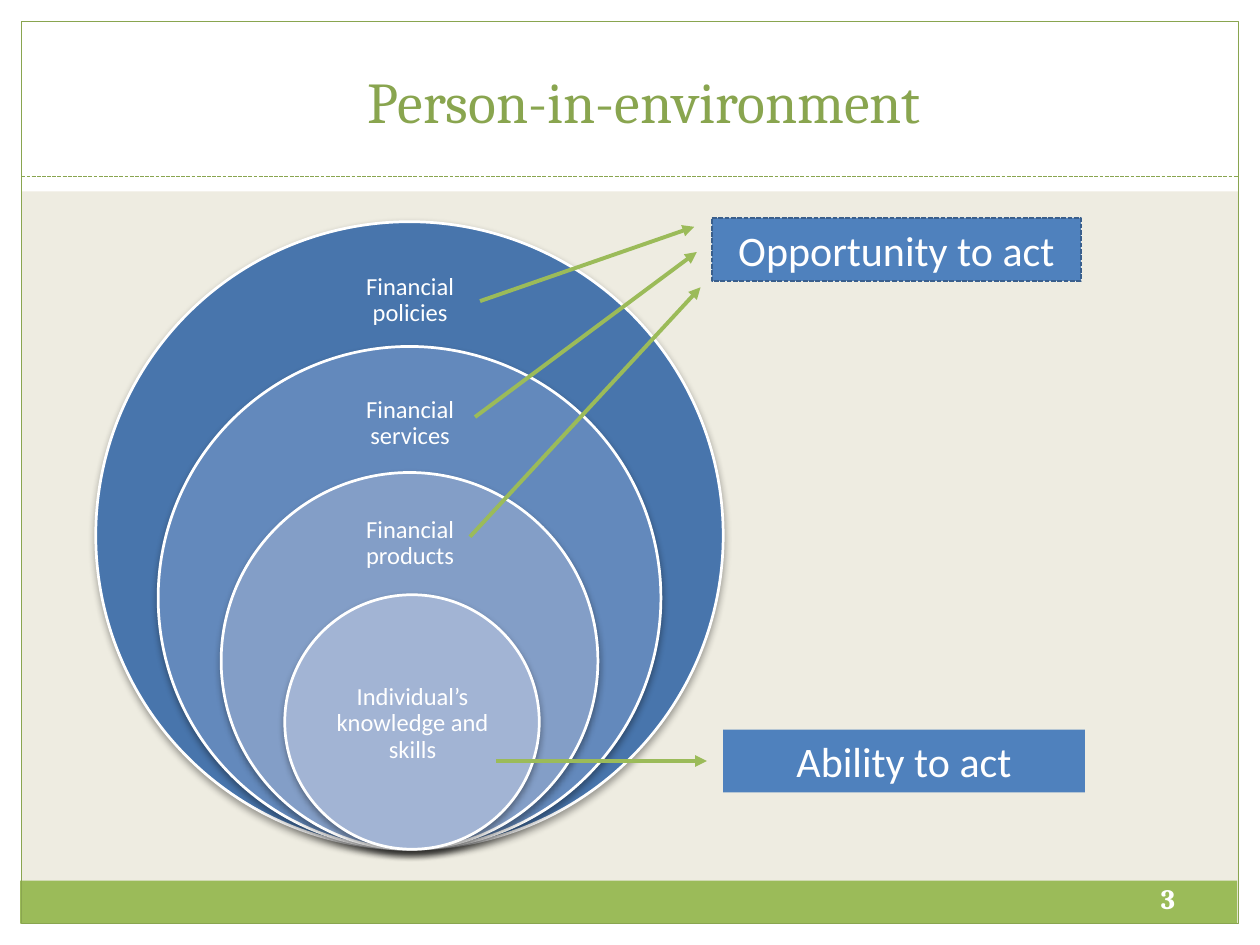
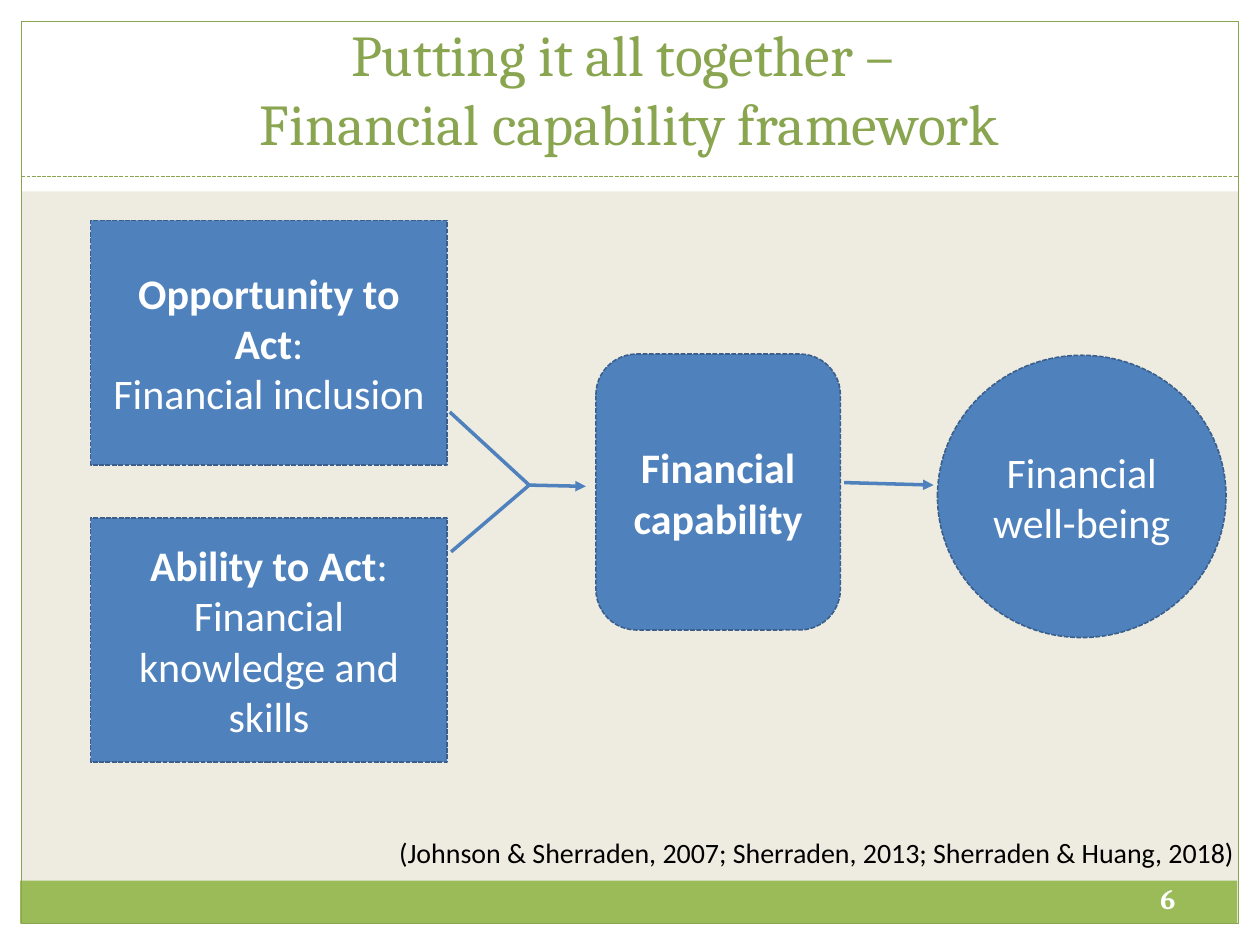
from dataclasses import dataclass

import lxml.etree
import pptx
import pptx.dml.color
import pptx.enum.dml
import pptx.enum.shapes
import pptx.enum.text
import pptx.oxml
import pptx.oxml.ns
import pptx.shapes.autoshape
import pptx.shapes.connector
import pptx.slide
import pptx.text.text
import pptx.util

Inches = pptx.util.Inches
Pt = pptx.util.Pt
SHAPE = pptx.enum.shapes.MSO_SHAPE
ANCHOR = pptx.enum.text.MSO_ANCHOR
ALIGN = pptx.enum.text.PP_ALIGN
DASH = pptx.enum.dml.MSO_LINE.SQUARE_DOT

WHITE = "FFFFFF"
BLACK = "000000"
CREAM = "EEECE1"
GREEN = "9BBB59"
DARK_GREEN = "89A54F"
BLUE = "4F81BD"
DARK_BLUE = "3A5F8C"
BODY_FONT = "Calibri"
TITLE_FONT = "Cambria"

Frame = tuple[float, float, float, float]  # left, top, width, height
Point = tuple[float, float]


@dataclass
class Span:
    text: str
    bold: bool = False


@dataclass
class TextStyle:
    size: float
    color: str = WHITE
    font: str = BODY_FONT
    align: ALIGN = ALIGN.CENTER
    anchor: ANCHOR = ANCHOR.MIDDLE
    inset: float | None = None
    spacing: float | None = None
    wrap: bool = True


@dataclass
class Box:
    frame: Frame
    paragraphs: list[list[Span]]
    kind: SHAPE = SHAPE.RECTANGLE
    anchor: ANCHOR = ANCHOR.MIDDLE
    outlined: bool = True


@dataclass
class Ring:
    center: float
    diameter: float
    color: str
    label: str
    label_frame: Frame


@dataclass
class Line:
    start: Point
    end: Point
    arrow: bool = True


TITLE_STYLE = TextStyle(33, DARK_GREEN, TITLE_FONT, anchor=ANCHOR.BOTTOM)
NUMBER_STYLE = TextStyle(16, font=TITLE_FONT, inset=0.05)
RING_STYLE = TextStyle(14, inset=0.11, spacing=0.9)
SOURCE_STYLE = TextStyle(16, BLACK, align=ALIGN.LEFT, anchor=ANCHOR.TOP, wrap=False)

EDGES: list[Frame] = [
    (0, 7.33, 10, 0.17),
    (0, 0, 10, 1.52),
    (0, 0, 0.17, 7.5),
    (9.83, 0, 0.17, 7.5),
]

RING_BOTTOM = 6.74
RINGS = [
    Ring(3.25, 4.98, "4875AC", "Financial policies", (2.56, 2.01, 1.39, 0.75)),
    Ring(3.25, 3.99, "6389BC", "Financial services", (2.56, 3, 1.39, 0.72)),
    Ring(3.25, 2.99, "839EC7", "Financial products", (2.56, 3.98, 1.39, 0.67)),
    Ring(3.27, 2.02, "A2B4D4", "Individual’s knowledge and skills", (2.56, 5.24, 1.43, 1.01)),
]
OUTCOMES = [
    Box((5.65, 1.73, 2.93, 0.5), [[Span("Opportunity to act")]], anchor=ANCHOR.TOP),
    Box((5.74, 5.79, 2.87, 0.5), [[Span("Ability to act")]], anchor=ANCHOR.TOP, outlined=False),
]
RING_ARROWS = [
    Line((3.81, 2.39), (5.51, 1.8)),
    Line((3.77, 3.31), (5.53, 2)),
    Line((3.73, 4.26), (5.56, 2.28)),
    Line((3.94, 6.04), (5.61, 6.04)),
]

JUNCTION = (4.2, 3.85)
FRAMEWORK_LINES = [
    Line((3.57, 3.27), JUNCTION, arrow=False),
    Line((3.58, 4.38), JUNCTION, arrow=False),
    Line(JUNCTION, (4.65, 3.86)),
    Line((6.7, 3.83), (7.41, 3.85)),
]
FRAMEWORK_BOXES = [
    Box((0.72, 4.11, 2.83, 1.94),
        [[Span("Ability to Act", True), Span(":")],
         [Span("Financial knowledge and skills")]]),
    Box((0.72, 1.75, 2.83, 1.94),
        [[Span("Opportunity to Act", True), Span(":")],
         [Span("Financial inclusion")]]),
    Box((4.73, 2.81, 1.94, 2.19), [[Span("Financial capability", True)]],
        SHAPE.ROUNDED_RECTANGLE),
    Box((7.44, 2.82, 2.29, 2.24), [[Span("Financial well-being")]], SHAPE.OVAL),
]


def rgb(color: str) -> pptx.dml.color.RGBColor:
    return pptx.dml.color.RGBColor.from_string(color)


def lengths(values: tuple[float, ...]) -> list[int]:
    return [Inches(value) for value in values]


def write(tf: pptx.text.text.TextFrame, paragraphs: list[list[Span]], style: TextStyle) -> None:
    tf.word_wrap = style.wrap
    tf.vertical_anchor = style.anchor
    if style.inset is not None:
        tf.margin_left = tf.margin_right = Inches(style.inset)
        tf.margin_top = tf.margin_bottom = Inches(style.inset)
    for i, spans in enumerate(paragraphs):
        p = tf.add_paragraph() if i else tf.paragraphs[0]
        p.text = spans[0].text
        for span in spans[1:]:
            p.add_run().text = span.text
        p.alignment = style.align
        if style.spacing:
            p.line_spacing = style.spacing
        # A line break splits one span into several runs of the same weight.
        bolds = [s.bold for s in spans] if len(spans) > 1 else [spans[0].bold] * len(p.runs)
        for r, bold in zip(p.runs, bolds):
            r.font.name = style.font
            r.font.size = Pt(style.size)
            r.font.bold = bold
            r.font.color.rgb = rgb(style.color)


def add_text(s: pptx.slide.Slide, frame: Frame, span: Span, style: TextStyle) -> None:
    tf = s.shapes.add_textbox(*lengths(frame)).text_frame
    write(tf, [[span]], style)


def add_shape(s: pptx.slide.Slide, kind: SHAPE, frame: Frame, fill: str | None = None,
              line: str | None = None, width: float = 0.75) -> pptx.shapes.autoshape.Shape:
    sp = s.shapes.add_shape(kind, *lengths(frame))
    sp.shadow.inherit = False
    if fill:
        sp.fill.solid()
        sp.fill.fore_color.rgb = rgb(fill)
    else:
        sp.fill.background()
    if line:
        sp.line.color.rgb = rgb(line)
        sp.line.width = Pt(width)
    else:
        sp.line.fill.background()
    return sp


def add_line(s: pptx.slide.Slide, line: Line, color: str,
             width: float) -> pptx.shapes.connector.Connector:
    cxn = s.shapes.add_connector(pptx.enum.shapes.MSO_CONNECTOR.STRAIGHT,
                                 *lengths(line.start + line.end))
    cxn.line.color.rgb = rgb(color)
    cxn.line.width = Pt(width)
    if line.arrow:
        tail = lxml.etree.SubElement(cxn.line._get_or_add_ln(), pptx.oxml.ns.qn("a:tailEnd"))
        tail.set("type", "triangle")
    lxml.etree.SubElement(cxn._element.spPr, pptx.oxml.ns.qn("a:effectLst"))
    return cxn


def add_soft_shadow(sp: pptx.shapes.autoshape.Shape) -> None:
    effects = sp._element.spPr.find(pptx.oxml.ns.qn("a:effectLst"))
    effects.append(pptx.oxml.parse_xml(
        f'<a:outerShdw {pptx.oxml.ns.nsdecls("a")} blurRad="{Pt(4)}" dist="{Pt(2)}" '
        f'dir="5400000" rotWithShape="0"><a:srgbClr val="{BLACK}">'
        '<a:alpha val="35000"/></a:srgbClr></a:outerShdw>'))


def add_box(s: pptx.slide.Slide, box: Box) -> None:
    sp = add_shape(s, box.kind, box.frame, BLUE, DARK_BLUE if box.outlined else None, 0.9)
    if box.outlined:
        sp.line.dash_style = DASH
    write(sp.text_frame, box.paragraphs, TextStyle(24, anchor=box.anchor))


def add_ring(s: pptx.slide.Slide, ring: Ring) -> None:
    frame = (ring.center - ring.diameter / 2, RING_BOTTOM - ring.diameter,
             ring.diameter, ring.diameter)
    add_soft_shadow(add_shape(s, SHAPE.OVAL, frame, ring.color, WHITE, 1.57))
    add_text(s, ring.label_frame, Span(ring.label), RING_STYLE)


def add_slide(prs: pptx.presentation.Presentation, title: str, title_frame: Frame,
              number: str) -> pptx.slide.Slide:
    """Add a title-only slide with the shared bands, frame and page number."""
    s = prs.slides.add_slide(prs.slide_layouts[5])
    s.background.fill.solid()
    s.background.fill.fore_color.rgb = rgb(CREAM)
    for edge in EDGES:
        add_shape(s, SHAPE.RECTANGLE, edge, WHITE)
    add_shape(s, SHAPE.RECTANGLE, (0.16, 6.99, 9.66, 0.34), GREEN)
    add_shape(s, SHAPE.RECTANGLE, (0.17, 0.17, 9.66, 7.16), line=DARK_GREEN)
    rule = add_line(s, Line((0.17, 1.4), (9.83, 1.4), arrow=False), DARK_GREEN, 0.75)
    rule.line.dash_style = DASH
    add_text(s, (8.7, 6.89, 1.14, 0.48), Span(number, True), NUMBER_STYLE)

    sp = s.shapes.title
    sp.left, sp.top, sp.width, sp.height = lengths(title_frame)
    sp.text_frame.auto_size = pptx.enum.text.MSO_AUTO_SIZE.NONE
    write(sp.text_frame, [[Span(title)]], TITLE_STYLE)
    s.shapes._spTree.append(sp._element)  # in front of the white band
    return s


def build_environment(prs: pptx.presentation.Presentation) -> None:
    s = add_slide(prs, "Person-in-environment", (0.45, 0.32, 9.33, 0.8), "3")
    for ring in RINGS:
        add_ring(s, ring)
    for box in OUTCOMES:
        add_box(s, box)
    for arrow in RING_ARROWS:
        add_line(s, arrow, GREEN, 2.25)


def build_framework(prs: pptx.presentation.Presentation) -> None:
    s = add_slide(prs, "Putting it all together – \vFinancial capability framework",
                  (0.33, 0.19, 9.33, 1.11), "6")
    add_text(s, (3.07, 6.58, 6.86, 0.37),
             Span("(Johnson & Sherraden, 2007; Sherraden, 2013; Sherraden & Huang, 2018)"),
             SOURCE_STYLE)
    for line in FRAMEWORK_LINES:
        add_line(s, line, BLUE, 2)
    for box in FRAMEWORK_BOXES:
        add_box(s, box)


def main() -> None:
    prs = pptx.Presentation()
    prs.slide_width, prs.slide_height = Inches(10), Inches(7.5)
    build_environment(prs)
    build_framework(prs)
    prs.save("out.pptx")


if __name__ == "__main__":
    main()
